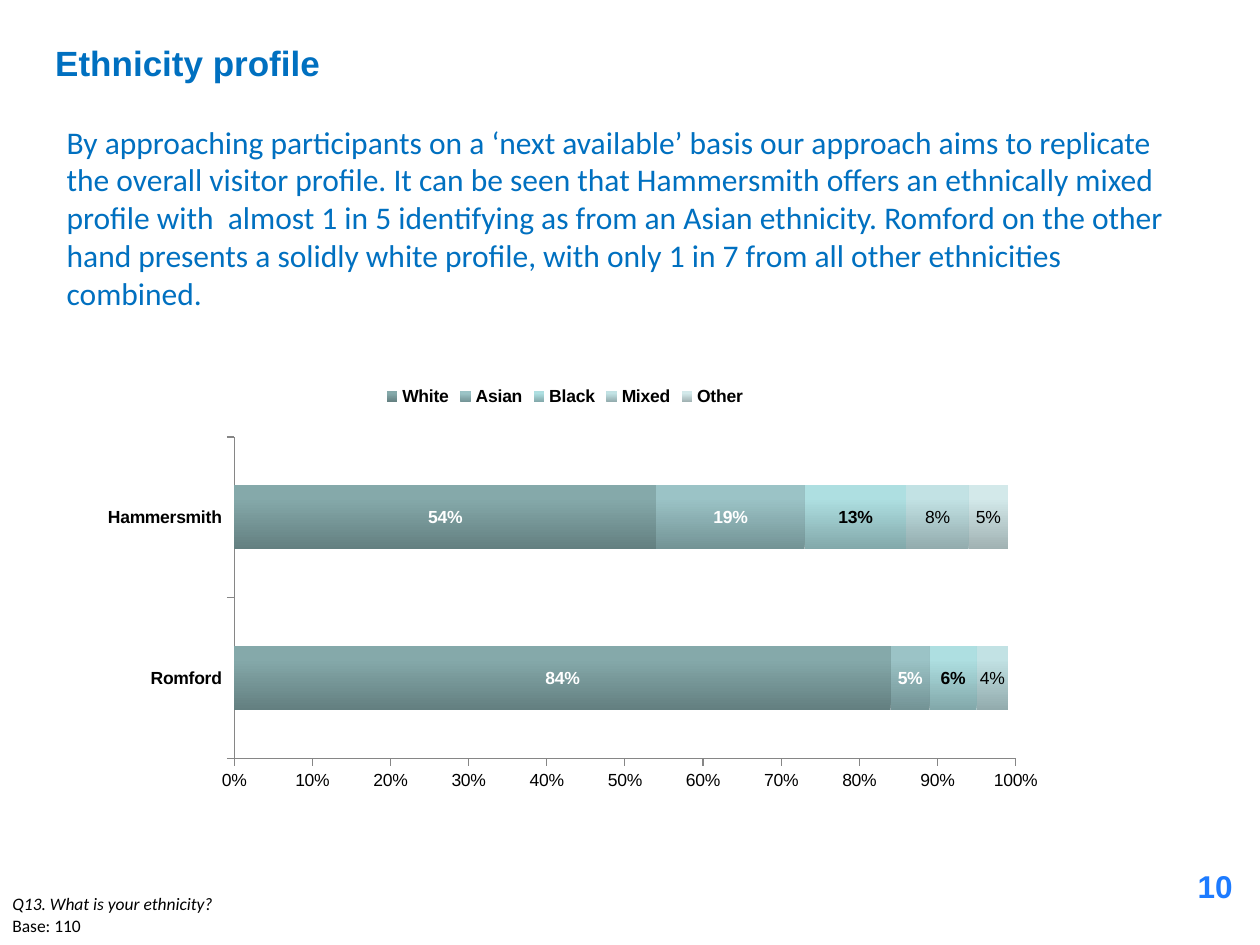
from lxml.etree import SubElement
from pptx import Presentation
from pptx.chart.data import CategoryChartData
from pptx.dml.color import RGBColor
from pptx.enum.chart import XL_CHART_TYPE, XL_LEGEND_POSITION, XL_TICK_MARK
from pptx.enum.text import MSO_ANCHOR, PP_ALIGN
from pptx.oxml.ns import qn
from pptx.util import Pt

BLUE = "0070C0"
PROFILE = (
    "By approaching participants on a ‘next available’ basis our approach aims to replicate "
    "the overall visitor profile. It can be seen that Hammersmith offers an ethnically mixed "
    "profile with  almost 1 in 5 identifying as from an Asian ethnicity. Romford on the other "
    "hand presents a solidly white profile, with only 1 in 7 from all other ethnicities combined."
)
CENTRES = ["Romford", "Hammersmith"]
ETHNICITIES = [
    ("White", (0.84, 0.54), "85A9AA", "637F80", "FFFFFF", True),
    ("Asian", (0.05, 0.19), "9BC3C6", "739395", "FFFFFF", True),
    ("Black", (0.06, 0.13), "AEDFE1", "82A8AA", "000000", True),
    ("Mixed", (0.04, 0.08), "C2E2E4", "92ABAD", "000000", False),
    ("Other", (None, 0.05), "D3E9EA", "A0B1B2", "000000", False),
]


def rgb(value):
    return RGBColor.from_string(value)


def style_font(font, color="000000", **formats):
    font.color.rgb = rgb(color)
    for attribute, value in formats.items():
        setattr(font, attribute, value)


def add_text(slide, box, lines, align=PP_ALIGN.LEFT, anchor=MSO_ANCHOR.TOP):
    frame = slide.shapes.add_textbox(*map(Pt, box)).text_frame
    frame.word_wrap = True
    frame.vertical_anchor = anchor
    for index, (words, formats) in enumerate(lines):
        paragraph = frame.add_paragraph() if index else frame.paragraphs[0]
        paragraph.alignment = align
        run = paragraph.add_run()
        run.text = words
        style_font(run.font, **formats)


def add_heading(slide, box):
    left, top, width, height = box
    title = dict(name="Arial", size=Pt(20), bold=True, color=BLUE)
    body = dict(name="Calibri", size=Pt(18), color=BLUE)
    add_text(slide, (left, top, 612, 37), [("Ethnicity profile", title)],
             anchor=MSO_ANCHOR.MIDDLE)
    add_text(slide, (left + 6.5, top + 49, width - 6.5, height - 49), [(PROFILE, body)])


def add_footer(slide, box):
    left, top, width, height = box
    note = dict(name="Calibri", size=Pt(10))
    number = dict(name="Arial", size=Pt(18), bold=True, color="1D7BFF")
    add_text(slide, (left, top + 15, 677, height - 15),
             [("Q13. What is your ethnicity?", dict(note, italic=True)), ("Base: 110", note)])
    add_text(slide, (left + width - 150, top, 150, 36), [("10", number)], PP_ALIGN.RIGHT)


def place_plot(chart, **fractions):
    plot_area = chart.plots[0]._element.getparent()
    for old in plot_area.findall(qn("c:layout")):
        plot_area.remove(old)
    layout = plot_area.makeelement(qn("c:layout"))
    plot_area.insert(0, layout)
    manual = SubElement(layout, qn("c:manualLayout"))
    settings = dict(layoutTarget="inner", xMode="edge", yMode="edge", **fractions)
    for tag, value in settings.items():
        SubElement(manual, qn(f"c:{tag}")).set("val", str(value))


def style_series(series, light, dark, label_color, bold):
    fill = series.format.fill
    fill.gradient()
    fill.gradient_angle = 90
    for stop, color, position in zip(fill.gradient_stops, (dark, light), (0, 0.8)):
        stop.color.rgb = rgb(color)
        stop.position = position
    labels = series.data_labels
    settings = dict(show_value=True, number_format="0%", number_format_is_linked=False)
    for attribute, value in settings.items():
        setattr(labels, attribute, value)
    style_font(labels.font, label_color, name="Arial", size=Pt(10), bold=bold)


def add_ethnicity_chart(slide, box):
    data = CategoryChartData(number_format="0%")
    data.categories = CENTRES
    for name, shares, *_ in ETHNICITIES:
        data.add_series(name, shares)
    chart = slide.shapes.add_chart(XL_CHART_TYPE.BAR_STACKED, *map(Pt, box), data).chart
    chart.has_title = False
    style_font(chart.font, name="Arial", size=Pt(10))
    chart.has_legend = True
    chart.legend.position = XL_LEGEND_POSITION.TOP
    chart.legend.include_in_layout = False
    style_font(chart.legend.font, name="Arial", size=Pt(10), bold=True)

    plot = chart.plots[0]
    plot.gap_width, plot.overlap = 150, 100
    for series, (_, _, *style) in zip(plot.series, ETHNICITIES):
        style_series(series, *style)

    for axis, bold in ((chart.category_axis, True), (chart.value_axis, False)):
        axis.has_major_gridlines = False
        axis.major_tick_mark = XL_TICK_MARK.OUTSIDE
        axis.format.line.color.rgb = rgb("868686")
        style_font(axis.tick_labels.font, name="Arial", size=Pt(10), bold=bold)
    shares_axis = chart.value_axis
    for attribute, value in dict(minimum_scale=0, maximum_scale=1, major_unit=0.1).items():
        setattr(shares_axis, attribute, value)
    shares_axis.tick_labels.number_format = "0%"
    shares_axis.tick_labels.number_format_is_linked = False
    place_plot(chart, x=0.17, y=0.15, w=0.78, h=0.75)


def main():
    deck = Presentation()
    deck.slide_width, deck.slide_height = Pt(720), Pt(540)
    slide = deck.slides.add_slide(deck.slide_layouts[6])
    add_heading(slide, (24.5, 17.5, 653, 134))
    add_ethnicity_chart(slide, (36.5, 213, 572.5, 245))
    add_footer(slide, (0, 492, 711.5, 47))
    deck.save("out.pptx")


if __name__ == "__main__":
    main()
